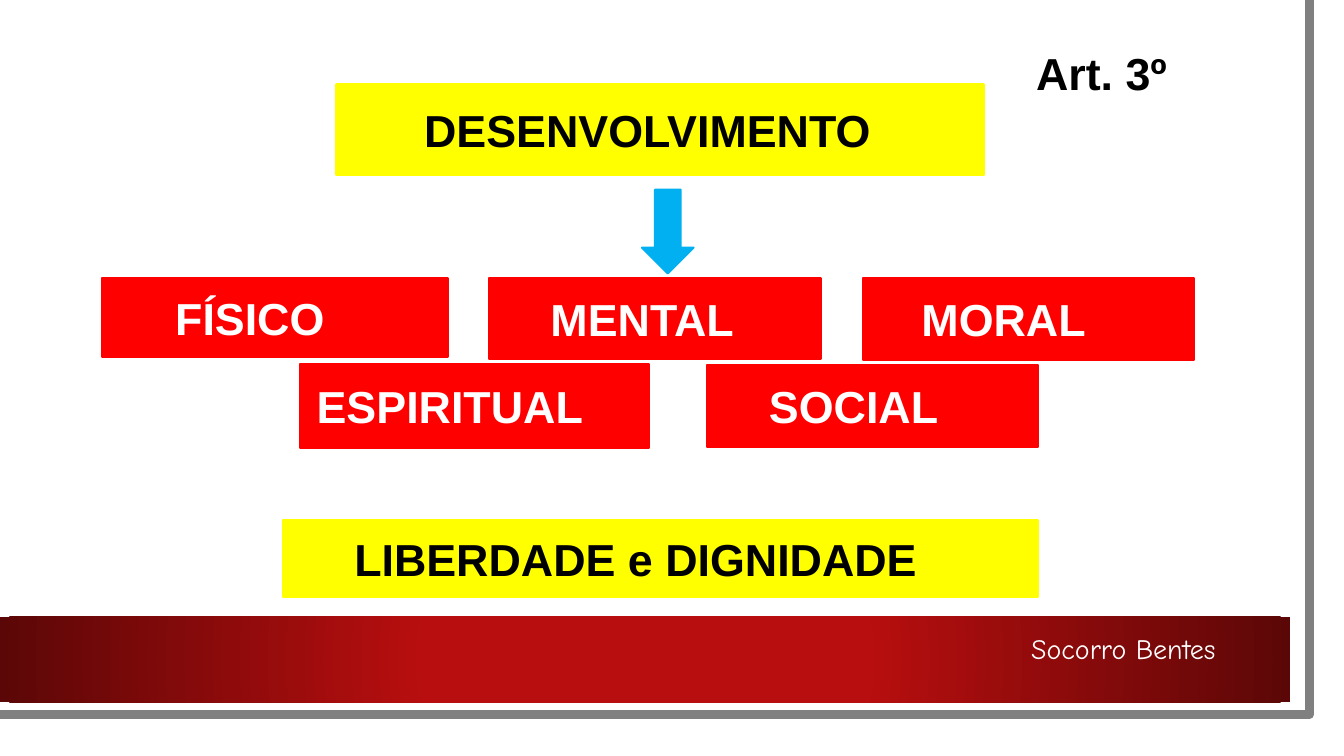
from lxml import etree
from pptx import Presentation
from pptx.dml.color import RGBColor
from pptx.enum.shapes import MSO_SHAPE
from pptx.enum.text import MSO_ANCHOR, PP_ALIGN
from pptx.oxml.ns import qn
from pptx.util import Cm, Pt

RECTANGLE, DOWN_ARROW = MSO_SHAPE.RECTANGLE, MSO_SHAPE.DOWN_ARROW
MIDDLE = MSO_ANCHOR.MIDDLE
LEFT, CENTER, RIGHT = PP_ALIGN.LEFT, PP_ALIGN.CENTER, PP_ALIGN.RIGHT

BLACK = RGBColor(0x00, 0x00, 0x00)
WHITE = RGBColor(0xFF, 0xFF, 0xFF)
GRAY = RGBColor(0x80, 0x80, 0x80)
YELLOW = RGBColor(0xFF, 0xFF, 0x00)
RED = RGBColor(0xFF, 0x00, 0x00)
BLUE = RGBColor(0x00, 0xB0, 0xF0)
BAND_RED = RGBColor(0xB8, 0x0E, 0x0F)
BAND_DARK = RGBColor(0x5C, 0x07, 0x07)

HEADING = {"name": "Arial", "size": Pt(32), "bold": True}
SIGNATURE = {"name": "Comic Neue", "size": Pt(20)}


def write(shape, text, alignment, color, font_format):
    paragraph = shape.text_frame.paragraphs[0]
    paragraph.alignment = alignment
    run = paragraph.add_run()
    run.text = text
    run.font.color.rgb = color
    for attribute, value in font_format.items():
        setattr(run.font, attribute, value)


def add_block(preset, place, color):
    """Add a preset shape whose fill and outline share one colour."""
    block = slide.shapes.add_shape(preset, *map(Cm, place))
    block.shadow.inherit = False
    block.fill.solid()
    block.fill.fore_color.rgb = color
    block.line.color.rgb = color
    block.line.width = Pt(1.5)
    return block


prs = Presentation()
prs.slide_width, prs.slide_height = Cm(33.87), Cm(19.05)
slide = prs.slides.add_slide(prs.slide_layouts[6])

# Page edge and footer band
edge_builder = slide.shapes.build_freeform(32.56, 0, scale=Cm(1))
edge_builder.add_line_segments([(32.64, 17.83), (-0.08, 17.81)], close=False)
page_edge = edge_builder.convert_to_shape()
page_edge.shadow.inherit = False
page_edge.fill.background()
page_edge.line.color.rgb = GRAY
page_edge.line.width = Pt(6.5)

footer_band = slide.shapes.add_shape(RECTANGLE, Cm(0), Cm(15.54), Cm(32.51), Cm(2.16))
footer_band.shadow.inherit = False
footer_band.line.fill.background()
footer_band.fill.gradient()
band_stops = [(0.34, BAND_RED), (1, BAND_DARK)]
for stop, (position, color) in zip(footer_band.fill.gradient_stops, band_stops):
    stop.position = position
    stop.color.rgb = color
gradient = footer_band.element.spPr.find(qn("a:gradFill"))
linear = gradient.find(qn("a:lin"))
circle = etree.Element(qn("a:path"), {"path": "circle"})
etree.SubElement(circle, qn("a:fillToRect"), dict.fromkeys("ltrb", "50000"))
gradient.replace(linear, circle)

# Article number and signature
for text, place, alignment, color, font_format in [
    ("Art. 3º", (25.86, 1.02, 4.06, 1.63), LEFT, BLACK, HEADING),
    ("Socorro Bentes", (20.37, 15.8, 10.52, 1.12), RIGHT, WHITE, SIGNATURE),
]:
    caption = slide.shapes.add_textbox(*map(Cm, place))
    caption.text_frame.word_wrap = True
    write(caption, text, alignment, color, font_format)

# Development, its five aspects, and the conditions; the right inset shifts each label
for text, place, fill, color, right_inset in [
    ("DESENVOLVIMENTO", (8.48, 2.13, 16.31, 2.29), YELLOW, BLACK, 0.88),
    ("FÍSICO", (2.57, 7.01, 8.71, 1.98), RED, WHITE, 1.5),
    ("MENTAL", (12.32, 7.01, 8.36, 2.03), RED, WHITE, 0.88),
    ("MORAL", (21.74, 7.01, 8.36, 2.06), RED, WHITE, 1.5),
    ("ESPIRITUAL", (7.57, 9.17, 8.79, 2.11), RED, WHITE, 1.5),
    ("SOCIAL", (17.81, 9.19, 8.36, 2.08), RED, WHITE, 1.2),
    ("LIBERDADE e DIGNIDADE", (7.14, 13.11, 19.02, 1.93), YELLOW, BLACK, 1.5),
]:
    block = add_block(RECTANGLE, place, fill)
    frame = block.text_frame
    frame.word_wrap = True
    frame.vertical_anchor = MIDDLE
    frame.margin_right = Cm(right_inset)
    write(block, text, CENTER, color, HEADING)

add_block(DOWN_ARROW, (16.18, 4.78, 1.3, 2.11), BLUE)

prs.save("out.pptx")
